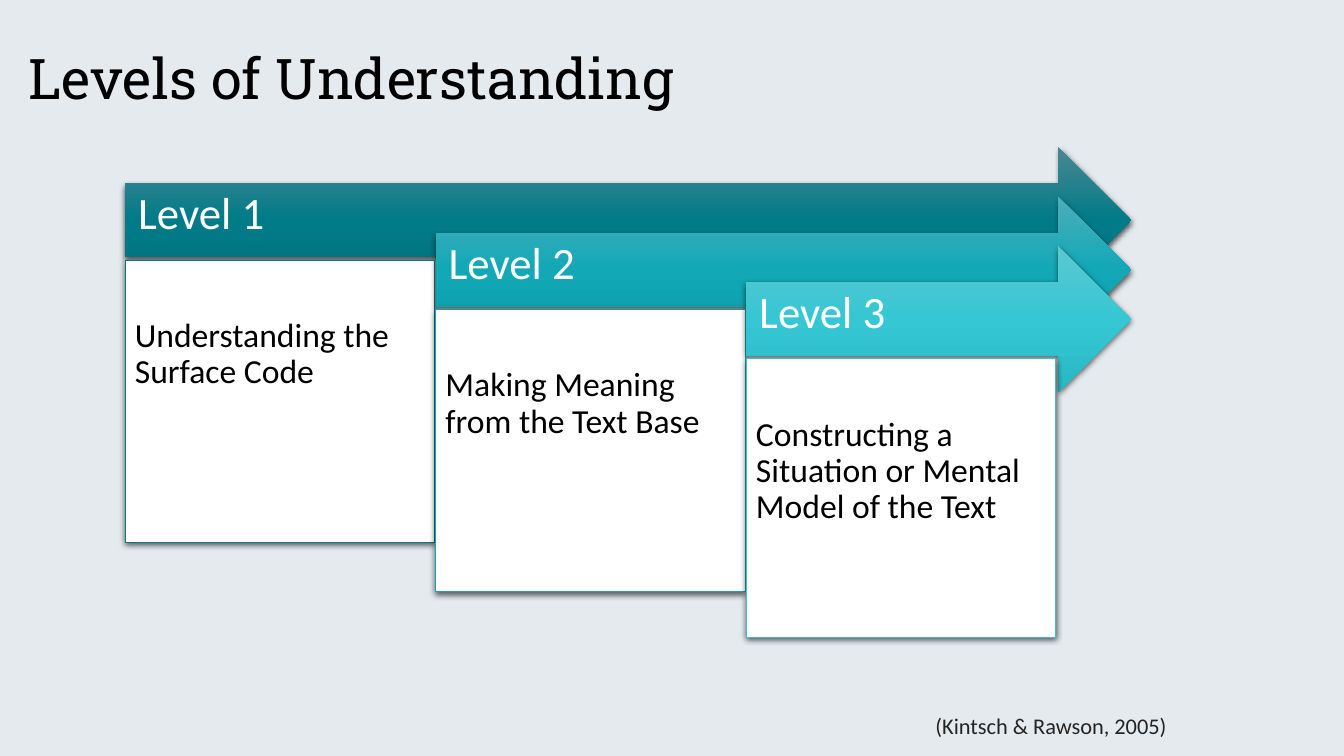
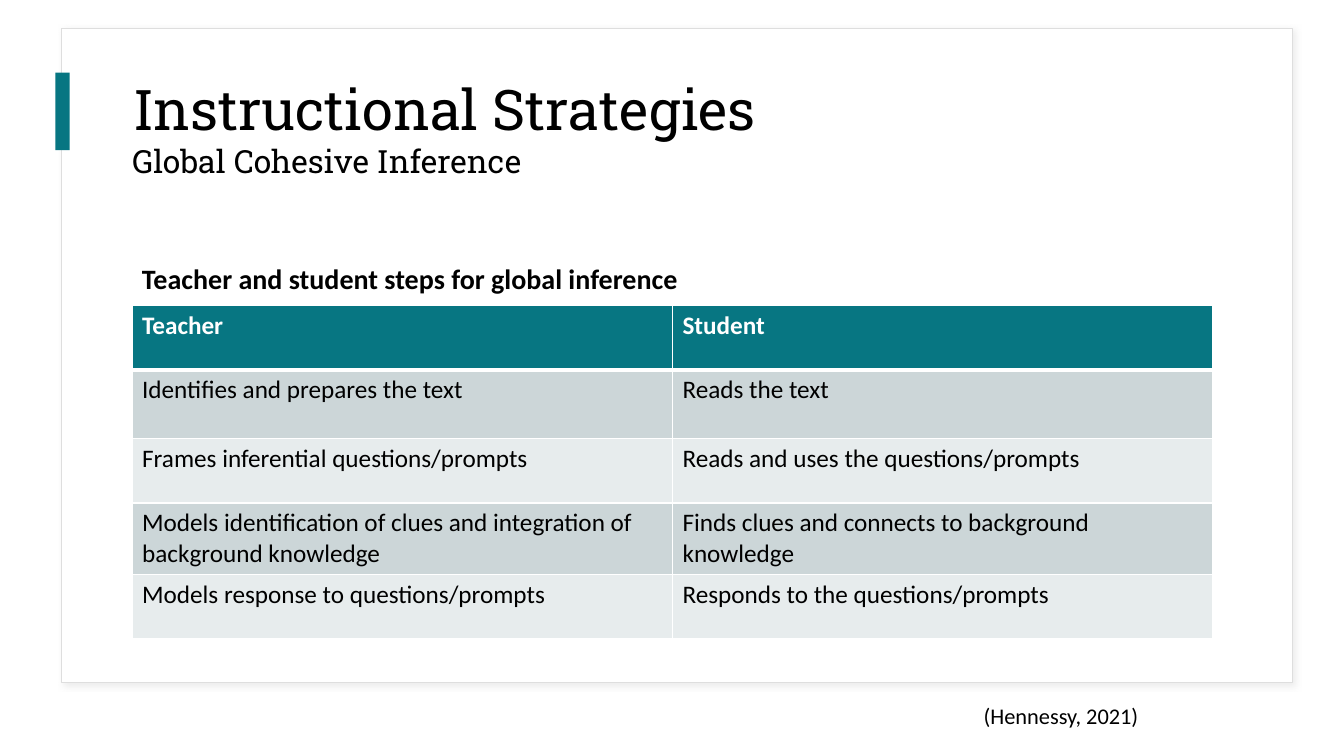
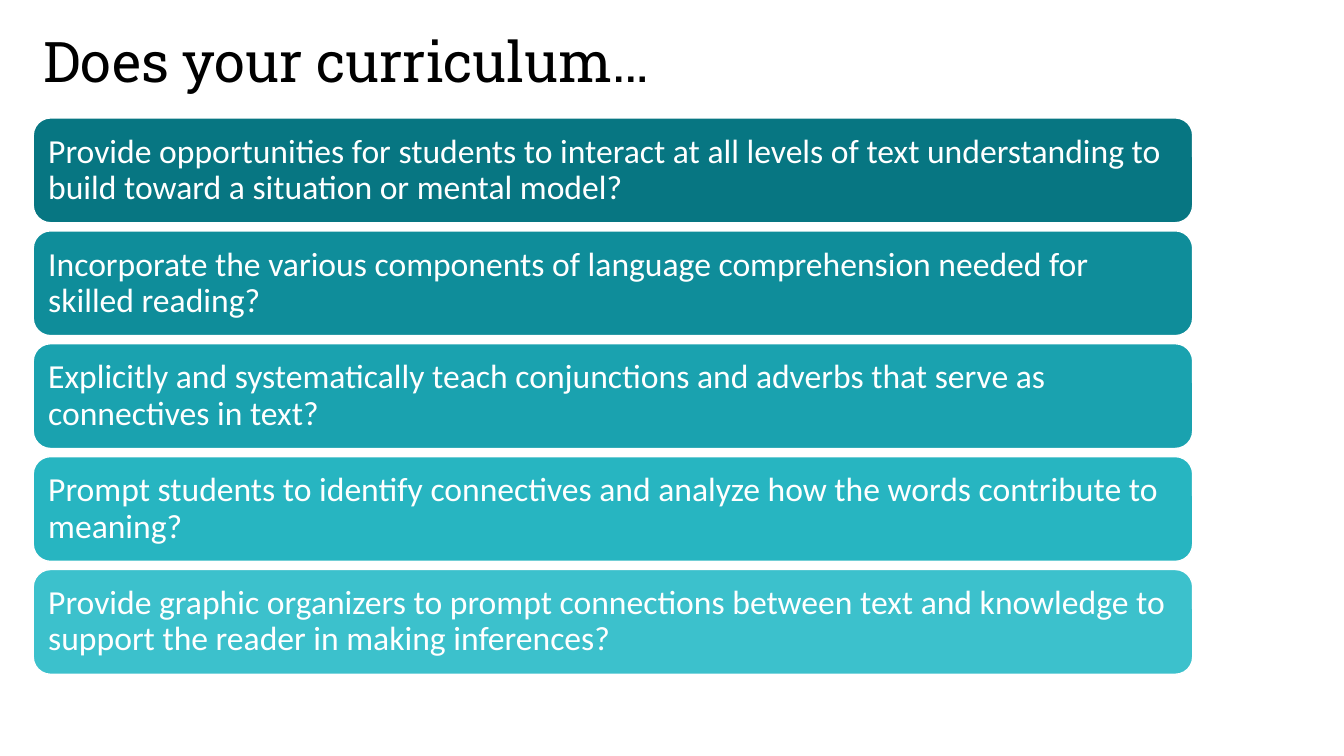
import pptx
import pptx.util
import pptx.dml.color
import pptx.enum.shapes
import pptx.enum.text
import pptx.oxml
import pptx.oxml.ns
import copy
import lxml.etree

Inches = pptx.util.Inches
Pt = pptx.util.Pt
rgb = pptx.dml.color.RGBColor.from_string
qn = pptx.oxml.ns.qn
SHAPE = pptx.enum.shapes.MSO_SHAPE
ANCHOR = pptx.enum.text.MSO_ANCHOR
ALIGN = pptx.enum.text.PP_ALIGN

TEAL, WHITE, BLACK = "077682", "FFFFFF", "000000"
HEADING = dict(font="Roboto Slab", size=40, spacing=0.9)
DEEP_SHADOW = dict(color=BLACK, alpha=63, blur=4.5, dist=1.5, angle=90)
FAINT_SHADOW = dict(color="D9D9D9", alpha=50, blur=4, dist=3, angle=45)


def write(frame, text, font="Calibri", size=18, color=BLACK, bold=False,
          align=ALIGN.LEFT, anchor=ANCHOR.TOP, spacing=1.0, insets=(0.1, 0.05, 0.1, 0.05)):
    frame.word_wrap = True
    frame.auto_size = pptx.enum.text.MSO_AUTO_SIZE.NONE
    frame.vertical_anchor = anchor
    frame.margin_left, frame.margin_top, frame.margin_right, frame.margin_bottom = map(Inches, insets)
    paragraph = frame.paragraphs[0]
    paragraph.alignment = align
    paragraph.line_spacing = spacing
    run = paragraph.add_run()
    run.text = text
    run.font.name = font
    run.font.size = Pt(size)
    run.font.bold = bold
    run.font.color.rgb = rgb(color)


def add_block(slide, kind, left, top, width, height, fills, line=None, line_width=1, shadow=None):
    block = slide.shapes.add_shape(kind, Inches(left), Inches(top), Inches(width), Inches(height))
    if len(fills) == 1:
        block.fill.solid()
        block.fill.fore_color.rgb = rgb(fills[0])
    else:
        block.fill.gradient()
        block.fill.gradient_angle = 270
        stop_list = block._element.spPr.find(".//" + qn("a:gsLst"))
        while len(stop_list) < len(fills):
            stop_list.append(copy.deepcopy(stop_list[-1]))
        for number, (stop, color) in enumerate(zip(block.fill.gradient_stops, fills)):
            stop.position = number / (len(fills) - 1)
            stop.color.rgb = rgb(color)
    if line:
        block.line.color.rgb = rgb(line)
        block.line.width = Pt(line_width)
    else:
        block.line.fill.background()
    block.shadow.inherit = False
    if shadow:
        effects = block._element.spPr.find(qn("a:effectLst"))
        outer = lxml.etree.SubElement(
            effects, qn("a:outerShdw"), blurRad=str(Pt(shadow["blur"])), dist=str(Pt(shadow["dist"])),
            dir=str(shadow["angle"] * 60000), algn="ctr", rotWithShape="0")
        tint = lxml.etree.SubElement(outer, qn("a:srgbClr"), val=shadow["color"])
        lxml.etree.SubElement(tint, qn("a:alpha"), val=str(shadow["alpha"] * 1000))
    return block


deck = pptx.Presentation()
deck.slide_width, deck.slide_height = Inches(13.33), Inches(7.5)

pages = []
for heading, background, area, style in [
    ("Levels of Understanding", "E5EAEE", (0.18, 0.52, 9.77, 0.58), dict(anchor=ANCHOR.MIDDLE)),
    ("Instructional Strategies", WHITE, (1.22, 0.56, 11.19, 1.11), dict(anchor=ANCHOR.MIDDLE)),
    ("Does your curriculum…", WHITE, (0.33, 0.21, 12.68, 0.77), dict(spacing=1.0)),
]:
    page = deck.slides.add_slide(deck.slide_layouts[5])
    page.background.fill.solid()
    page.background.fill.fore_color.rgb = rgb(background)
    title = page.shapes.title
    title.left, title.top, title.width, title.height = map(Inches, area)
    write(title.text_frame, heading, **{**HEADING, **style})
    pages.append(page)
levels_page, strategies_page, curriculum_page = pages

levels = [
    ("Level 1", "Understanding the Surface Code", ("4B8792", "017B88", "006E7A"), TEAL, 2.8),
    ("Level 2", "Making Meaning from the Text Base", ("4DAEBA", "12A8B6", "0A9BA8"), "1AA2AF", 2.8),
    ("Level 3", "Constructing a Situation or Mental Model of the Text",
     ("5CC8D2", "35C7D3", "27B8C4"), "3CC1CC", 2.76),
]
arrow_tip = 11.22
for step, (level, meaning, gradient, outline, depth) in enumerate(levels):
    left = 1.24 + 3.08 * step
    top = 1.46 + 0.49 * step
    arrow = add_block(levels_page, SHAPE.RIGHT_ARROW, left, top, arrow_tip - left, 1.45,
                      gradient, shadow=DEEP_SHADOW)
    write(arrow.text_frame, level, size=32, color=WHITE, anchor=ANCHOR.MIDDLE, spacing=0.9,
          insets=(0.13, 0.13, 0.28, 0.23))
    panel = add_block(levels_page, SHAPE.RECTANGLE, left, top + 1.12, 3.07, depth, [WHITE],
                      line=outline, line_width=0.5, shadow=DEEP_SHADOW)
    write(panel.text_frame, meaning, size=24, spacing=0.9, insets=(0.1, 0.58, 0.1, 0.1))

card = add_block(strategies_page, SHAPE.RECTANGLE, 0.61, 0.28, 12.21, 6.49, [WHITE],
                 line="DEDEDE", shadow=FAINT_SHADOW)
strategies_page.shapes.title._element.addprevious(card._element)
add_block(strategies_page, SHAPE.RECTANGLE, 0.55, 0.72, 0.14, 0.77, [TEAL])

for page, text, area, style in [
    (levels_page, "(Kintsch & Rawson, 2005)", (8.9, 7.02, 2.77, 0.37),
     dict(size=16, color="242424", align=ALIGN.RIGHT)),
    (strategies_page, "Global Cohesive Inference", (1.31, 1.45, 10.52, 0.48),
     {**HEADING, "size": 22.8, "insets": (0, 0, 0, 0)}),
    (strategies_page, "Teacher and student steps for global inference", (1.31, 2.55, 10.08, 0.44),
     dict(size=20, bold=True)),
    (strategies_page, "(Hennessy, 2021)", (5.26, 6.92, 6.13, 0.37), dict(size=16, align=ALIGN.RIGHT)),
]:
    write(page.shapes.add_textbox(*map(Inches, area)).text_frame, text, **style)

steps = [
    ("Teacher", "Student"),
    ("Identifies and prepares the text", "Reads the text"),
    ("Frames inferential questions/prompts", "Reads and uses the questions/prompts"),
    ("Models identification of clues and integration of background knowledge",
     "Finds clues and connects to background knowledge"),
    ("Models response to questions/prompts", "Responds to the questions/prompts"),
]
row_heights = [0.64, 0.68, 0.64, 0.64, 0.64]
steps_table = strategies_page.shapes.add_table(
    len(steps), 2, Inches(1.31), Inches(3.03), Inches(10.72), Inches(sum(row_heights))).table
steps_table.horz_banding = False
for row, (texts, height) in enumerate(zip(steps, row_heights)):
    steps_table.rows[row].height = Inches(height)
    is_header = row == 0
    fill = TEAL if is_header else ("E7ECED", "CCD6D8")[row % 2]
    borders = dict(lnL=1, lnR=1, lnT=3 if row == 1 else 1, lnB=3 if is_header else 1)
    for column, text in enumerate(texts):
        cell = steps_table.cell(row, column)
        cell.fill.solid()
        cell.fill.fore_color.rgb = rgb(fill)
        properties = cell._tc.get_or_add_tcPr()
        for position, (side, width) in enumerate(borders.items()):
            border = lxml.etree.Element(qn("a:" + side), w=str(Pt(width)))
            solid = lxml.etree.SubElement(border, qn("a:solidFill"))
            lxml.etree.SubElement(solid, qn("a:srgbClr"), val=WHITE)
            properties.insert(position, border)
        write(cell.text_frame, text, color=WHITE if is_header else BLACK, bold=is_header)

questions = [
    ("Provide opportunities for students to interact at all levels of text understanding to build "
     "toward a situation or mental model?", TEAL),
    ("Incorporate the various components of language comprehension needed for skilled reading?", "0F8D9A"),
    ("Explicitly and systematically teach conjunctions and adverbs that serve as connectives in text?",
     "1AA2AF"),
    ("Prompt students to identify connectives and analyze how the words contribute to meaning?", "27B5C1"),
    ("Provide graphic organizers to prompt connections between text and knowledge to support the "
     "reader in making inferences?", "3CC1CC"),
]
for number, (question, fill) in enumerate(questions):
    bar = add_block(curriculum_page, SHAPE.ROUNDED_RECTANGLE, 0.33, 1.17 + 1.12 * number, 11.5, 1.04,
                    [fill], line=WHITE)
    write(bar.text_frame, question, size=24, color=WHITE, anchor=ANCHOR.MIDDLE, spacing=0.9,
          insets=(0.1, 0.1, 0.1, 0.1))

deck.save("out.pptx")
